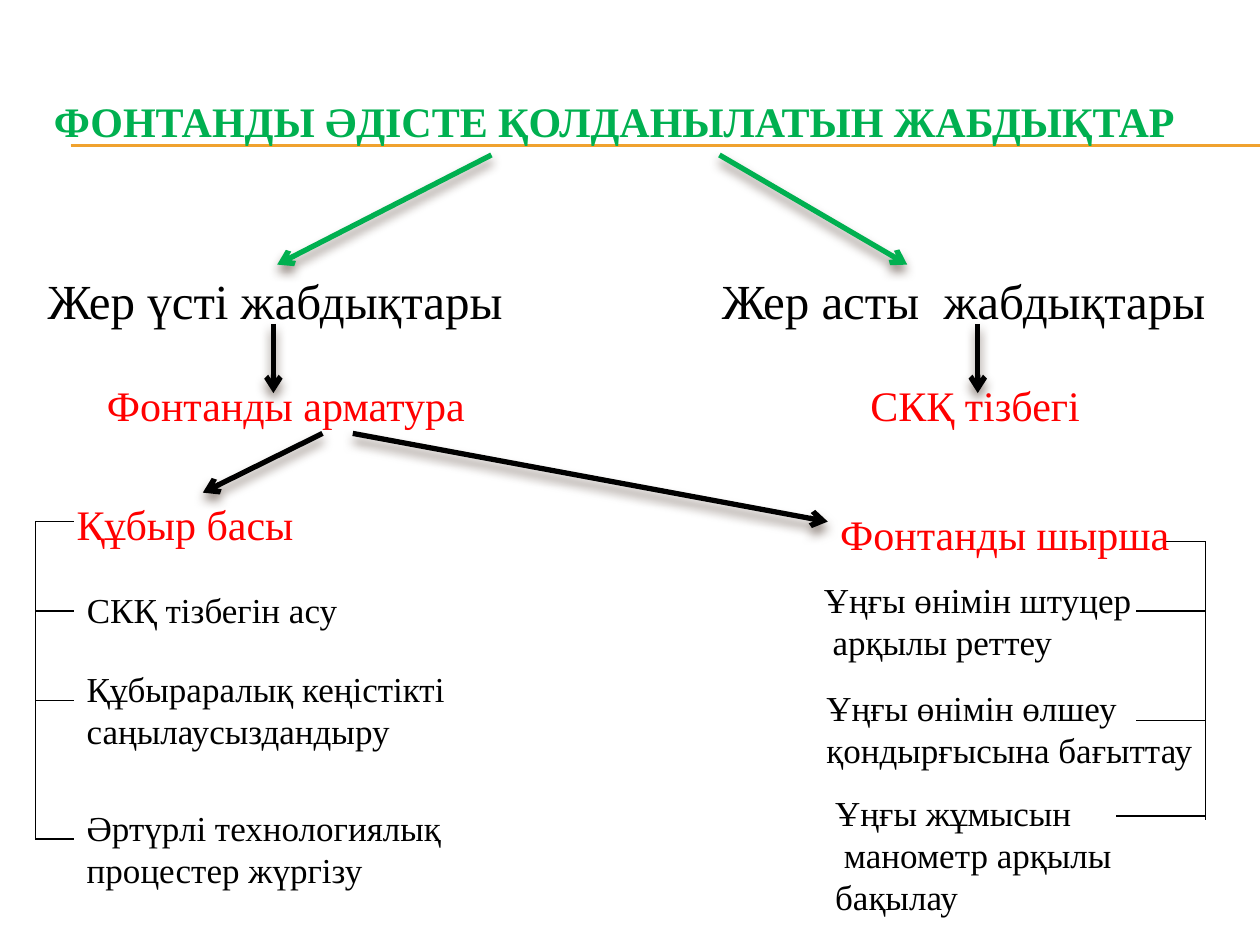
from lxml import etree
from pptx import Presentation
from pptx.dml.color import RGBColor
from pptx.enum.shapes import MSO_CONNECTOR
from pptx.enum.text import MSO_ANCHOR, MSO_AUTO_SIZE
from pptx.oxml.ns import qn
from pptx.util import Emu, Inches, Pt

STRAIGHT = MSO_CONNECTOR.STRAIGHT
MIDDLE, TOP = MSO_ANCHOR.MIDDLE, MSO_ANCHOR.TOP
FIT_SHAPE, NO_FIT = MSO_AUTO_SIZE.SHAPE_TO_FIT_TEXT, MSO_AUTO_SIZE.NONE

WIDTH, HEIGHT = Inches(10), Inches(7.5)
COLUMN, ROW = WIDTH / 100, HEIGHT / 75  # grid of 100 columns by 75 rows
FONT = "Times New Roman"
GREEN, RED, BLACK, GOLD, SHADOW = "00B050", "FF0000", "000000", "F0A22E", "4E3B30"
HEADING = {"size": Pt(28), "color": BLACK}
SUBHEADING = {"size": Pt(24), "color": RED}
BODY = {"size": Pt(20), "color": BLACK}
TITLE = {"size": Pt(24), "color": GREEN, "bold": True}
THIN, THICK = 0.79, 3


def rgb(color):
    return RGBColor.from_string(color)


def across(columns):
    return Emu(round(columns * COLUMN))


def down(rows):
    return Emu(round(rows * ROW))


def add_text(page, box, lines, style, wrap=False, anchor=TOP):
    left, top, width, height = box
    shape = page.shapes.add_textbox(across(left), down(top), across(width), down(height))
    frame = shape.text_frame
    settings = {"word_wrap": wrap, "vertical_anchor": anchor,
                "auto_size": NO_FIT if wrap else FIT_SHAPE}
    for name, value in settings.items():
        setattr(frame, name, value)
    for index, line in enumerate(lines):
        para = frame.add_paragraph() if index else frame.paragraphs[0]
        span = para.add_run()
        span.text = line
        span.font.name = FONT
        for name, value in style.items():
            if name == "color":
                span.font.color.rgb = rgb(value)
            else:
                setattr(span.font, name, value)


def add_line(page, start, end, color=BLACK, weight=THIN):
    line = page.shapes.add_connector(STRAIGHT, across(start[0]), down(start[1]),
                                     across(end[0]), down(end[1]))
    line.line.color.rgb = rgb(color)
    line.line.width = Pt(weight)
    effects = etree.SubElement(line._element.spPr, qn("a:effectLst"))
    return line, effects


def add_arrow(page, start, end, color=BLACK):
    """Draw a thick line with an open head and a soft shadow below it."""
    arrow, effects = add_line(page, start, end, color, THICK)
    etree.SubElement(arrow.line._get_or_add_ln(), qn("a:tailEnd"), type="arrow")
    shadow = etree.SubElement(effects, qn("a:outerShdw"), blurRad=str(Pt(6)),
                              dist=str(Pt(4)), dir="5400000", rotWithShape="0")
    shade = etree.SubElement(shadow, qn("a:srgbClr"), val=SHADOW)
    etree.SubElement(shade, qn("a:alpha"), val="60000")


def add_header(page, box, title):
    left, top, width, height = box
    for offset in (6.5, 6.6):
        add_line(page, (5.6, top + offset), (100, top + offset), GOLD, 0.75)
    add_text(page, box, [title], TITLE, wrap=True, anchor=MIDDLE)


def add_branch(page, box, heading, subheading, sub_left, sub_width, stem):
    """Place a heading, a stem arrow and the subheading it leads to."""
    left, top, width, height = box
    add_text(page, (left, top, width, 5.7), [heading], HEADING)
    add_text(page, (left + sub_left, top + height - 5, sub_width, 5), [subheading], SUBHEADING)
    add_arrow(page, (left + stem, top + 4.7), (left + stem, top + 10.2))


def add_bracket(page, box, spine, head_tick, heading, head_box, items):
    """Place a heading and its items, tied by ticks to an upright spine."""
    left, top, width, height = box
    add_line(page, (spine, top), (spine, top + height))
    add_line(page, (spine, top), (head_tick, top))
    add_text(page, head_box, [heading], SUBHEADING)
    for lines, item_left, item_top, item_width, tick_end, tick_row in items:
        item_height = 1.1 + 3.33 * len(lines)
        add_text(page, (item_left, item_top, item_width, item_height), lines, BODY)
        add_line(page, (spine, tick_row), (tick_end, tick_row))


def main():
    deck = Presentation()
    deck.slide_width, deck.slide_height = WIDTH, HEIGHT
    page = deck.slides.add_slide(deck.slide_layouts[6])

    add_header(page, (3.3, 5, 95, 9.2), "ФОНТАНДЫ ӘДІСТЕ ҚОЛДАНЫЛАТЫН ЖАБДЫҚТАР")
    add_branch(page, (2.8, 21, 38.5, 13.6), "Жер үсті жабдықтары",
               "Фонтанды арматура", 4.7, 30.7, 18.9)
    add_branch(page, (56.3, 21, 40.8, 13.6), "Жер асты  жабдықтары",
               "СКҚ тізбегі", 11.8, 18.8, 21.3)

    for start, end, color in [((39, 12.3), (22, 21), GREEN),
                              ((57.1, 12.3), (72, 21), GREEN),
                              ((25.6, 34.4), (16.1, 39.1), BLACK),
                              ((28, 34.4), (65.7, 41.4), BLACK)]:
        add_arrow(page, start, end, color)

    add_bracket(page, (2.8, 41.4, 34.5, 25.2), 2.8, 5.9,
                "Құбыр басы", (5.1, 39.1, 19.4, 5), [
                    (["СКҚ тізбегін асу"], 5.9, 46.2, 22.1, 5.9, 48.5),
                    (["Құбыраралық кеңістікті", "саңылаусыздандыру"],
                     5.9, 52.5, 31.4, 5.9, 55.6),
                    (["Әртүрлі технологиялық", "процестер жүргізу"],
                     5.9, 63.5, 30.4, 5.9, 66.6)])
    add_bracket(page, (64.4, 43, 31.3, 22.1), 95.7, 92.5,
                "Фонтанды шырша", (65.7, 39.9, 28.6, 5), [
                    (["Ұңғы өнімін штуцер", " арқылы реттеу"],
                     64.4, 45.4, 26.6, 90.2, 48.5),
                    (["Ұңғы өнімін өлшеу", "қондырғысына бағыттау"],
                     64.6, 54, 31.4, 90.2, 57.2),
                    (["Ұңғы жұмысын", " манометр арқылы", "бақылау"],
                     65.3, 62.3, 24.9, 88.6, 64.75)])
    deck.save("out.pptx")


if __name__ == "__main__":
    main()
